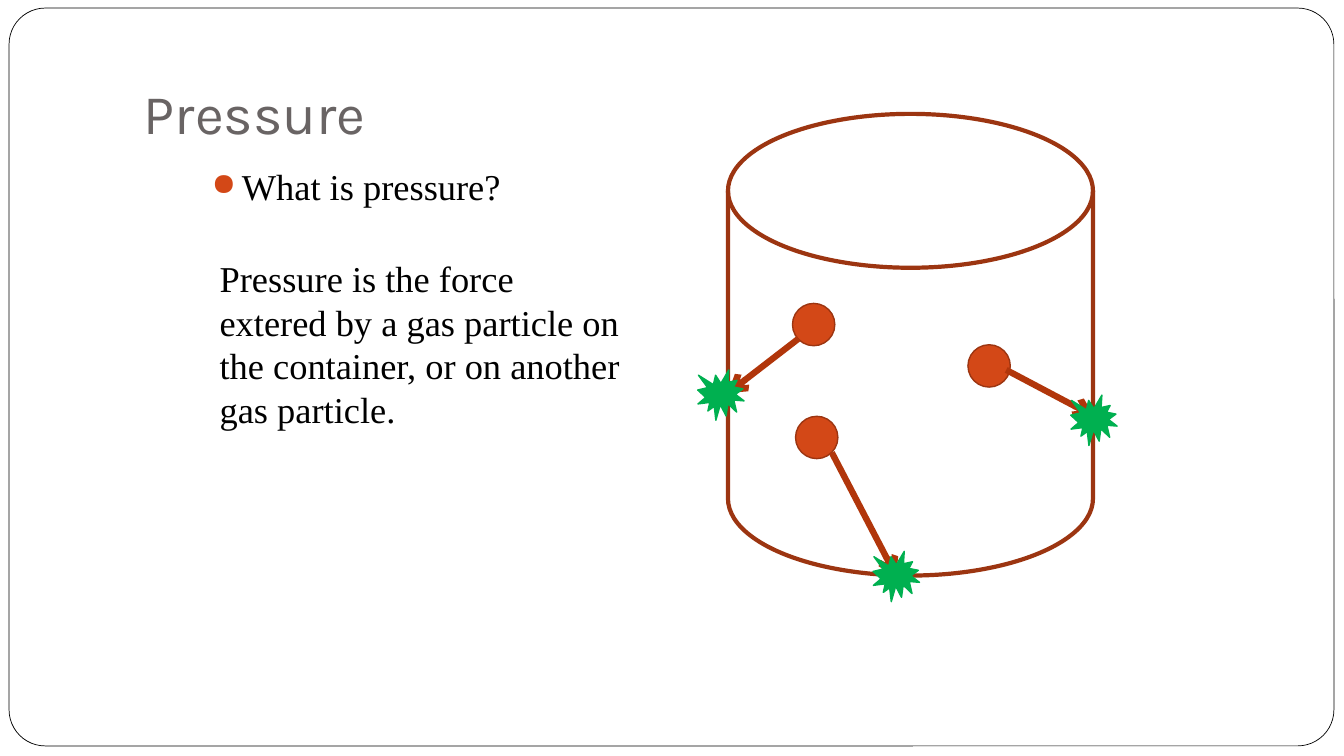
from lxml.etree import SubElement
from pptx import Presentation
from pptx.dml.color import RGBColor
from pptx.enum.shapes import MSO_CONNECTOR, MSO_SHAPE
from pptx.enum.text import MSO_ANCHOR
from pptx.oxml.ns import qn
from pptx.util import Inches, Pt

COLORS = {
    "paper": "FFFFFF", "frame": "000000", "title": "696464", "text": "000000",
    "particle": "D34817", "outline": "9C3511", "arrow": "B1360B", "impact": "00B050",
}


def color(name):
    return RGBColor.from_string(COLORS[name])


def add_outlined(slide, kind, box, fill, line, width):
    shape = slide.shapes.add_shape(kind, *map(Inches, box))
    shape.shadow.inherit = False
    shape.fill.solid()
    shape.fill.fore_color.rgb = color(fill)
    shape.line.color.rgb = color(line)
    shape.line.width = Pt(width)
    return shape


def add_text(slide, box, words, font, frame):
    text_frame = slide.shapes.add_textbox(*map(Inches, box)).text_frame
    for name, value in {"word_wrap": True, **frame}.items():
        setattr(text_frame, name, value)
    paragraph = text_frame.paragraphs[0]
    run = paragraph.add_run()
    run.text = words
    for name, value in font.items():
        setattr(run.font, name, value)
    run.font.color.rgb = color("title" if font is TITLE_FONT else "text")
    return paragraph


TITLE_FONT = {"name": "Karla", "size": Pt(40)}
BODY_FONT = {"name": "Times New Roman", "size": Pt(26)}


def add_bullet(paragraph, indent):
    paragraph.space_before = Pt(5.8)
    properties = paragraph._p.get_or_add_pPr()
    properties.set("marL", str(Inches(indent)))
    properties.set("indent", str(-Inches(indent)))
    bullet_color = SubElement(properties, qn("a:buClr"))
    SubElement(bullet_color, qn("a:srgbClr"), val=COLORS["particle"])
    SubElement(properties, qn("a:buSzPct"), val="85000")
    SubElement(properties, qn("a:buChar"), char="●")


def add_frame(slide, box):
    frame = add_outlined(slide, MSO_SHAPE.ROUNDED_RECTANGLE, box, "paper", "frame", 0.5)
    frame.adjustments[0] = 0.049


def add_explanation(slide, left, top):
    # Title, question and answer
    add_text(slide, (left, top, 11.33, 1.25), "Pressure", TITLE_FONT,
             {"vertical_anchor": MSO_ANCHOR.BOTTOM, "margin_bottom": Inches(0.1)})
    question = add_text(slide, (left + 0.67, top + 1.28, 9.42, 5),
                        "What is pressure?", BODY_FONT, {})
    add_bullet(question, 0.3)


def add_answer(slide, box):
    add_text(slide, box, "Pressure is the force extered by a gas particle on the container, "
             "or on another gas particle.", BODY_FONT, {})


def add_path(slide, start, end):
    path = slide.shapes.add_connector(MSO_CONNECTOR.STRAIGHT, *map(Inches, start + end))
    path.line.color.rgb = color("arrow")
    path.line.width = Pt(4.5)
    SubElement(path.line._get_or_add_ln(), qn("a:tailEnd"), type="arrow")
    SubElement(path._element.spPr, qn("a:effectLst"))


def add_container(slide, left, top, width, height):
    add_outlined(slide, MSO_SHAPE.FLOWCHART_MAGNETIC_DISK, (left, top, width, height),
                 "paper", "outline", 3)

    # Particle corner, path start, path end and impact corner, from the container's corner
    collisions = [
        ((0.64, 1.88), (0.7, 2.23), (0, 2.77), (-0.3, 2.54)),
        ((0.67, 3), (1.03, 3.36), (1.67, 4.59), (1.44, 4.34)),
        ((2.38, 2.29), (2.76, 2.54), (3.63, 3), (3.4, 2.79)),
    ]
    placed = [[(left + x, top + y) for x, y in points] for points in collisions]
    for particle, *_ in placed:
        add_outlined(slide, MSO_SHAPE.FLOWCHART_CONNECTOR, particle + (0.42, 0.42),
                     "particle", "outline", 1)
    for _, start, end, _ in placed:
        add_path(slide, start, end)
    for *_, impact in placed:
        add_outlined(slide, MSO_SHAPE.EXPLOSION1, impact + (0.46, 0.5),
                     "impact", "impact", 1)


def main():
    presentation = Presentation()
    presentation.slide_width = Inches(13.33)
    presentation.slide_height = Inches(7.5)
    slide = presentation.slides.add_slide(presentation.slide_layouts[6])
    add_frame(slide, (0.09, 0.08, 13.14, 7.32))
    add_explanation(slide, 1.33, 0.3)
    add_container(slide, 7.22, 1.13, 3.62, 4.58)
    add_answer(slide, (2.08, 2.49, 4.17, 1.85))
    presentation.save("out.pptx")


if __name__ == "__main__":
    main()
